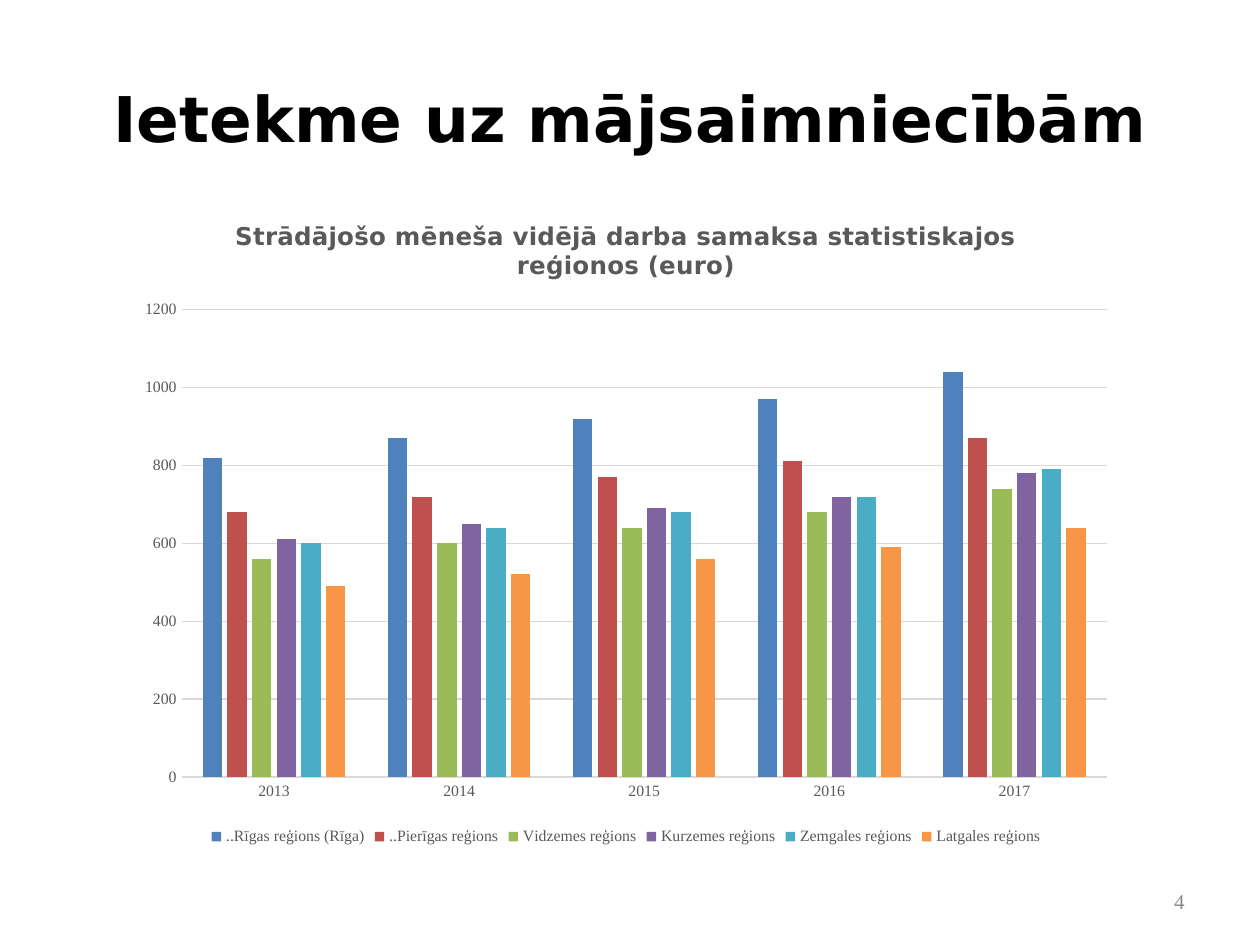
from pptx import Presentation
from pptx.chart.data import CategoryChartData
from pptx.dml.color import RGBColor
from pptx.enum.chart import XL_CHART_TYPE, XL_LEGEND_POSITION, XL_TICK_MARK
from pptx.enum.text import MSO_ANCHOR, PP_ALIGN
from pptx.util import Emu, Pt

COLUMNS = XL_CHART_TYPE.COLUMN_CLUSTERED
BOTTOM = XL_LEGEND_POSITION.BOTTOM
NO_TICK = XL_TICK_MARK.NONE
MIDDLE = MSO_ANCHOR.MIDDLE
CENTER, RIGHT = PP_ALIGN.CENTER, PP_ALIGN.RIGHT

PX = 914400 // 126
SANS, SERIF = "DejaVu Sans", "Times New Roman"
BLACK, DARK_GRAY, GRAY, LIGHT_GRAY = "000000", "595959", "898989", "D9D9D9"

CHART_TITLE = "Strādājošo mēneša vidējā darba samaksa statistiskajos reģionos (euro)"
YEARS = ["2013", "2014", "2015", "2016", "2017"]
REGIONS = [
    ("..Rīgas reģions (Rīga)", "4F81BD", [820, 870, 920, 970, 1040]),
    ("..Pierīgas reģions", "C0504D", [680, 720, 770, 810, 870]),
    ("Vidzemes reģions", "9BBB59", [560, 600, 640, 680, 740]),
    ("Kurzemes reģions", "8064A2", [610, 650, 690, 720, 780]),
    ("Zemgales reģions", "4BACC6", [600, 640, 680, 720, 790]),
    ("Latgales reģions", "F79646", [490, 520, 560, 590, 640]),
]


def px(*lengths):
    return [Emu(length * PX) for length in lengths]


def color(hex_string):
    return RGBColor.from_string(hex_string)


def set_font(font, name, size, hex_color, bold=False):
    font.name = name
    font.size = Pt(size)
    font.bold = bold
    font.color.rgb = color(hex_color)


def set_line(line, hex_color):
    line.color.rgb = color(hex_color)
    line.width = Pt(0.75)


def add_text(slide, box, text, alignment, *font_settings):
    frame = slide.shapes.add_textbox(*px(*box)).text_frame
    frame.word_wrap = True
    frame.vertical_anchor = MIDDLE
    paragraph = frame.paragraphs[0]
    paragraph.alignment = alignment
    run = paragraph.add_run()
    run.text = text
    set_font(run.font, *font_settings)


def style_axes(chart):
    for axis in (chart.category_axis, chart.value_axis):
        axis.major_tick_mark = axis.minor_tick_mark = NO_TICK
        set_font(axis.tick_labels.font, SERIF, 9, DARK_GRAY)
    set_line(chart.category_axis.format.line, LIGHT_GRAY)

    values = chart.value_axis
    values.minimum_scale, values.maximum_scale, values.major_unit = 0, 1200, 200
    values.tick_labels.number_format = "0"
    values.tick_labels.number_format_is_linked = False
    values.format.line.fill.background()
    set_line(values.major_gridlines.format.line, LIGHT_GRAY)


def add_wage_chart(slide, box):
    data = CategoryChartData(number_format="0")
    data.categories = YEARS
    for name, _, wages in REGIONS:
        data.add_series(name, wages)
    chart = slide.shapes.add_chart(COLUMNS, *px(*box), data).chart
    set_font(chart.font, SERIF, 10, BLACK)

    chart.has_title = True
    run = chart.chart_title.text_frame.paragraphs[0].add_run()
    run.text = CHART_TITLE
    set_font(run.font, SANS, 14, DARK_GRAY, True)
    chart.chart_title.include_in_layout = False

    chart.has_legend = True
    chart.legend.position = BOTTOM
    chart.legend.include_in_layout = False
    set_font(chart.legend.font, SERIF, 9, DARK_GRAY)

    style_axes(chart)
    plot = chart.plots[0]
    plot.gap_width, plot.overlap = 219, -27
    plot.vary_by_categories = False
    for series, (_, fill_color, _) in zip(plot.series, REGIONS):
        series.format.fill.solid()
        series.format.fill.fore_color.rgb = color(fill_color)


def add_title(slide, box, text):
    title = slide.shapes.title
    title.left, title.top, title.width, title.height = px(*box)
    frame = title.text_frame
    frame.word_wrap = True
    frame.vertical_anchor = MIDDLE
    paragraph = frame.paragraphs[0]
    paragraph.alignment = CENTER
    run = paragraph.add_run()
    run.text = text
    set_font(run.font, SANS, 36, BLACK, True)


def main():
    presentation = Presentation()
    presentation.slide_width, presentation.slide_height = px(1260, 945)
    slide = presentation.slides.add_slide(presentation.slide_layouts[6])
    add_text(slide, (63, 38, 1134, 158), "Ietekme uz mājsaimniecībām",
             CENTER, SANS, 36, BLACK, True)
    add_wage_chart(slide, (125, 195, 1002, 656))
    add_text(slide, (903, 876, 294, 50), "4", RIGHT, SERIF, 12, GRAY)
    presentation.save("out.pptx")


if __name__ == "__main__":
    main()
